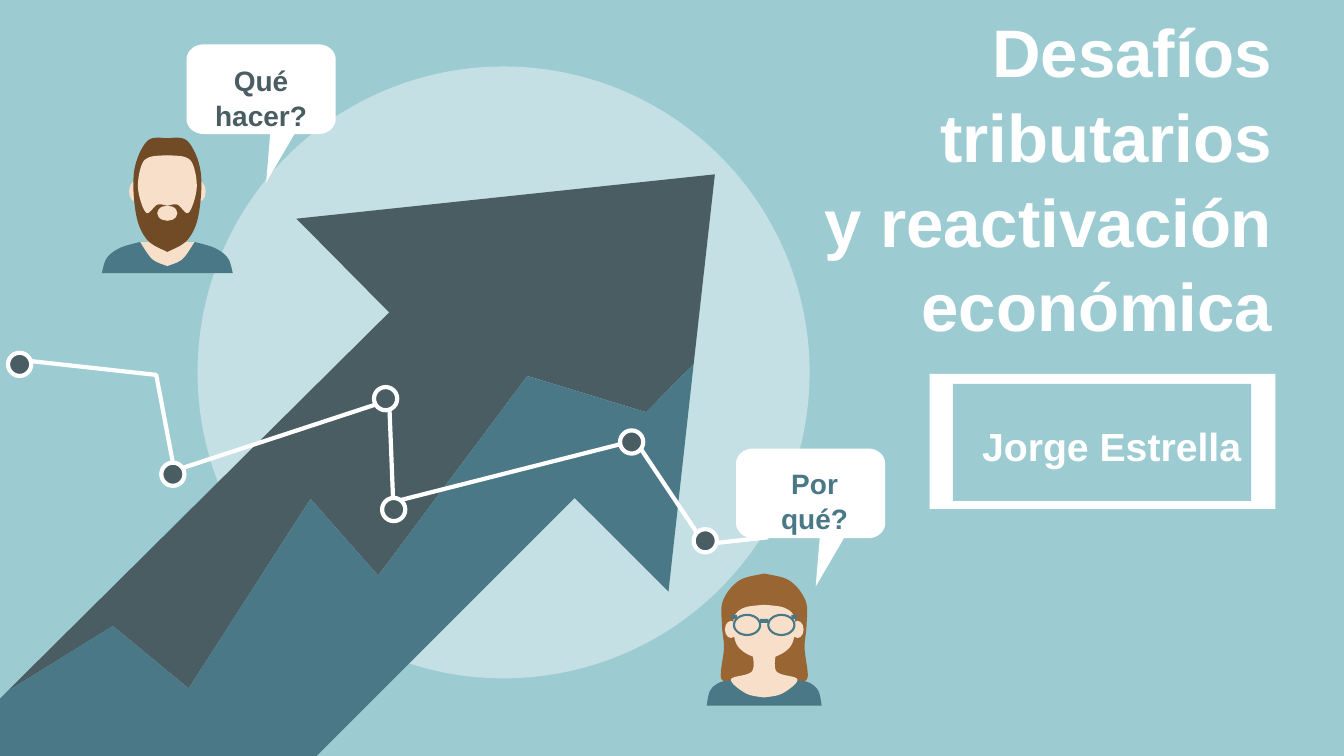
import math
from dataclasses import dataclass

import pptx
import pptx.dml.color
import pptx.enum.shapes
import pptx.enum.text
import pptx.util

Point = tuple[float, float]

SKY, PALE, SLATE, TEAL = "9CCCD2", "C4E0E4", "4A5D62", "4A7886"
WHITE, SKIN, AUBURN, BROWN = "FFFFFF", "F8DFC9", "996633", "714B25"
OVAL = pptx.enum.shapes.MSO_SHAPE.OVAL
RECTANGLE = pptx.enum.shapes.MSO_SHAPE.RECTANGLE
CENTER = pptx.enum.text.PP_ALIGN.CENTER
RIGHT = pptx.enum.text.PP_ALIGN.RIGHT


@dataclass
class Feature:
    """Symmetric part of a person: its right half, as offsets from the axis."""
    color: str
    half: list[Point]


@dataclass
class Person:
    axis: float
    ear_offset: float
    ear_top: float
    ear_width: float
    ear_height: float
    behind_ears: list[Feature]
    before_ears: list[Feature]


@dataclass
class Bubble:
    left: float
    top: float
    text: str
    color: str
    text_left: float
    text_top: float


def grid(units: float) -> int:
    """Length of a number of 2.54 cm grid units."""
    return pptx.util.Cm(units * 2.54)


def rgb(color: str) -> pptx.dml.color.RGBColor:
    return pptx.dml.color.RGBColor.from_string(color)


def paint(shape, fill: str | None, line: str | None, weight: float) -> None:
    shape.shadow.inherit = False
    if fill:
        shape.fill.solid()
        shape.fill.fore_color.rgb = rgb(fill)
    else:
        shape.fill.background()
    if line:
        shape.line.color.rgb = rgb(line)
        shape.line.width = pptx.util.Pt(weight)
    else:
        shape.line.fill.background()


def add_preset(slide, kind, left: float, top: float, width: float, height: float,
               fill: str | None, line: str | None = None, weight: float = 3) -> None:
    shape = slide.shapes.add_shape(kind, *map(grid, (left, top, width, height)))
    paint(shape, fill, line, weight)


def add_outline(slide, points: list[Point], fill: str | None,
                line: str | None = None) -> None:
    start, *rest = [(grid(x), grid(y)) for x, y in points]
    builder = slide.shapes.build_freeform(*start, scale=1.0)
    builder.add_line_segments(rest, close=fill is not None)
    paint(builder.convert_to_shape(), fill, line, 3)


def smooth(points: list[Point], steps: int = 8) -> list[Point]:
    """Catmull-Rom curve through all the points."""
    padded = [points[0], *points, points[-1]]
    curve = []
    for a, b, c, d in zip(padded, padded[1:], padded[2:], padded[3:]):
        for step in range(steps):
            t = step / steps
            curve.append(tuple(
                q + t / 2 * (r - p + t * (2 * p - 5 * q + 4 * r - s
                                          + t * (3 * (q - r) + s - p)))
                for p, q, r, s in zip(a, b, c, d)))
    return curve + [points[-1]]


def add_person(slide, person: Person) -> None:
    def add_features(features: list[Feature]) -> None:
        for feature in features:
            half = smooth(feature.half)
            add_outline(slide, [(person.axis + x, y) for x, y in half]
                        + [(person.axis - x, y) for x, y in reversed(half)], feature.color)

    add_features(person.behind_ears)
    for side in (-1, 1):
        left = person.axis + side * person.ear_offset - person.ear_width / 2
        add_preset(slide, OVAL, left, person.ear_top, person.ear_width,
                   person.ear_height, SKIN)
    add_features(person.before_ears)


def add_bubble(slide, bubble: Bubble) -> None:
    width, height, rx, ry = 1.48, 0.89, 0.17, 0.15
    corners = [(rx, ry), (width - rx, ry), (width - rx, height - ry), (rx, height - ry)]
    points: list[Point] = []
    for quarter, (x, y) in enumerate(corners):
        for step in range(9):
            angle = math.pi * (1 + quarter / 2 + step / 16)
            points.append((x + rx * math.cos(angle), y + ry * math.sin(angle)))
        if quarter == 2:
            points += [(1.07, height), (0.79, 1.37), (0.83, height)]
    add_outline(slide, [(bubble.left + x, bubble.top + y) for x, y in points], WHITE)


def write(frame, lines: list[str], size: int, color: str, align) -> None:
    frame.word_wrap = True
    frame.auto_size = pptx.enum.text.MSO_AUTO_SIZE.SHAPE_TO_FIT_TEXT
    for index, line in enumerate(lines):
        paragraph = frame.paragraphs[0] if index == 0 else frame.add_paragraph()
        paragraph.alignment = align
        paragraph.line_spacing = 1.05
        paragraph.space_before = pptx.util.Pt(0)
        run = paragraph.add_run()
        run.text = line
        run.font.name, run.font.size, run.font.bold = "Arial", pptx.util.Pt(size), True
        run.font.color.rgb = rgb(color)


def add_label(slide, left: float, top: float, width: float, height: float,
              text: str, size: int, color: str) -> None:
    box = slide.shapes.add_textbox(*map(grid, (left, top, width, height)))
    write(box.text_frame, [text], size, color, CENTER)


# Growth arrow: the ridge is shared by its dark and its light part
RIDGE = [(0.07, 6.86), (1.12, 6.21), (1.87, 6.83), (3.08, 4.95), (3.75, 5.71),
         (5.23, 3.73), (6.41, 4.09), (6.88, 3.61)]
ARROW_TOP = [(7.09, 1.73), (2.94, 2.17), (3.86, 3.1)]
ARROW_BASE = [(6.63, 5.87), (5.7, 4.94), (3.14, 7.5), (0, 7.5), (0, 6.93)]
TREND = [(0.19, 3.57), (1.55, 3.72), (1.73, 4.67), (3.86, 3.97),
         (3.9, 4.98), (6.3, 4.37), (6.99, 5.4), (7.62, 5.33)]
MARKERS = [(0.08, 3.5), (1.6, 4.59), (3.71, 3.84), (6.15, 4.27), (6.88, 5.25), (3.79, 4.94)]

# People: shoulders, neck and hair, then the face
WOMAN = Person(7.58, 0.33, 6.16, 0.12, 0.17, [
    Feature(TEAL, [(0.33, 6.74), (0.46, 6.78), (0.54, 6.86), (0.57, 7)]),
    Feature(AUBURN, [(0, 5.69), (0.25, 5.76), (0.41, 5.96), (0.42, 6.2),
                     (0.4, 6.43), (0.43, 6.72), (0.33, 6.75), (0.12, 6.7)]),
    Feature(SKIN, [(0.12, 6.45), (0.12, 6.66), (0.33, 6.74), (0.18, 6.88), (0, 6.92)]),
], [
    Feature(SKIN, [(0, 6), (0.2, 6.03), (0.3, 6.13), (0.29, 6.35), (0.2, 6.47), (0, 6.56)]),
])
MAN = Person(1.66, 0.32, 1.8, 0.12, 0.2, [
    Feature(TEAL, [(0.27, 2.4), (0.47, 2.46), (0.6, 2.56), (0.65, 2.71)]),
    Feature(SKIN, [(0.27, 2.4), (0.15, 2.57), (0, 2.64)]),
], [
    Feature(BROWN, [(0, 1.37), (0.2, 1.4), (0.33, 1.7), (0.31, 2.13), (0.2, 2.38), (0, 2.5)]),
    Feature(SKIN, [(0, 1.54), (0.18, 1.56), (0.26, 1.65), (0.29, 1.88),
                   (0.21, 2.11), (0.1, 2.03), (0, 2.04)]),
])

BUBBLES = [Bubble(7.3, 4.45, "Por qué?", TEAL, 7.41, 4.56),
           Bubble(1.85, 0.44, "Qué hacer?", SLATE, 1.92, 0.56)]


def main() -> None:
    deck = pptx.Presentation()
    deck.slide_width, deck.slide_height = grid(13.33), grid(7.5)
    slide = deck.slides.add_slide(deck.slide_layouts[5])
    slide.background.fill.solid()
    slide.background.fill.fore_color.rgb = rgb(SKY)

    # Title
    title = slide.shapes.title
    title.left, title.top, title.width, title.height = map(grid, (7, 0.08, 5.72, 3.33))
    title.text_frame.vertical_anchor = pptx.enum.text.MSO_ANCHOR.MIDDLE
    write(title.text_frame, ["Desafíos tributarios", "y reactivación económica"],
          48, WHITE, RIGHT)

    # Disc, arrow and trend line
    add_preset(slide, OVAL, 1.96, 0.66, 6.07, 6.07, PALE)
    add_outline(slide, RIDGE + ARROW_TOP, SLATE)
    add_outline(slide, RIDGE + ARROW_BASE, TEAL)
    add_outline(slide, TREND, None, WHITE)
    for left, top in MARKERS:
        add_preset(slide, OVAL, left, top, 0.23, 0.23, SLATE, WHITE)

    # Woman with glasses, bearded man with his mouth
    add_person(slide, WOMAN)
    for side in (-1, 1):
        add_preset(slide, OVAL, WOMAN.axis + side * 0.17 - 0.13, 6.1, 0.26, 0.2,
                   None, TEAL, 1.5)
        add_preset(slide, RECTANGLE, WOMAN.axis + side * 0.3 - 0.03, 6.1, 0.06, 0.04, TEAL)
    add_preset(slide, RECTANGLE, WOMAN.axis - 0.04, 6.14, 0.08, 0.04, TEAL)
    add_person(slide, MAN)
    add_preset(slide, OVAL, MAN.axis - 0.1, 2.04, 0.2, 0.15, SKIN)

    # Speech bubbles
    for bubble in BUBBLES:
        add_bubble(slide, bubble)
        add_label(slide, bubble.text_left, bubble.text_top, 1.34, 0.77,
                  bubble.text, 20, bubble.color)

    # Speaker's name in its frame
    add_preset(slide, RECTANGLE, 9.22, 3.71, 3.43, 1.34, WHITE)
    add_preset(slide, RECTANGLE, 9.45, 3.81, 2.96, 1.16, SKY)
    add_label(slide, 9.4, 4.12, 3.25, 0.57, "Jorge Estrella", 28, WHITE)

    deck.save("out.pptx")


if __name__ == "__main__":
    main()
